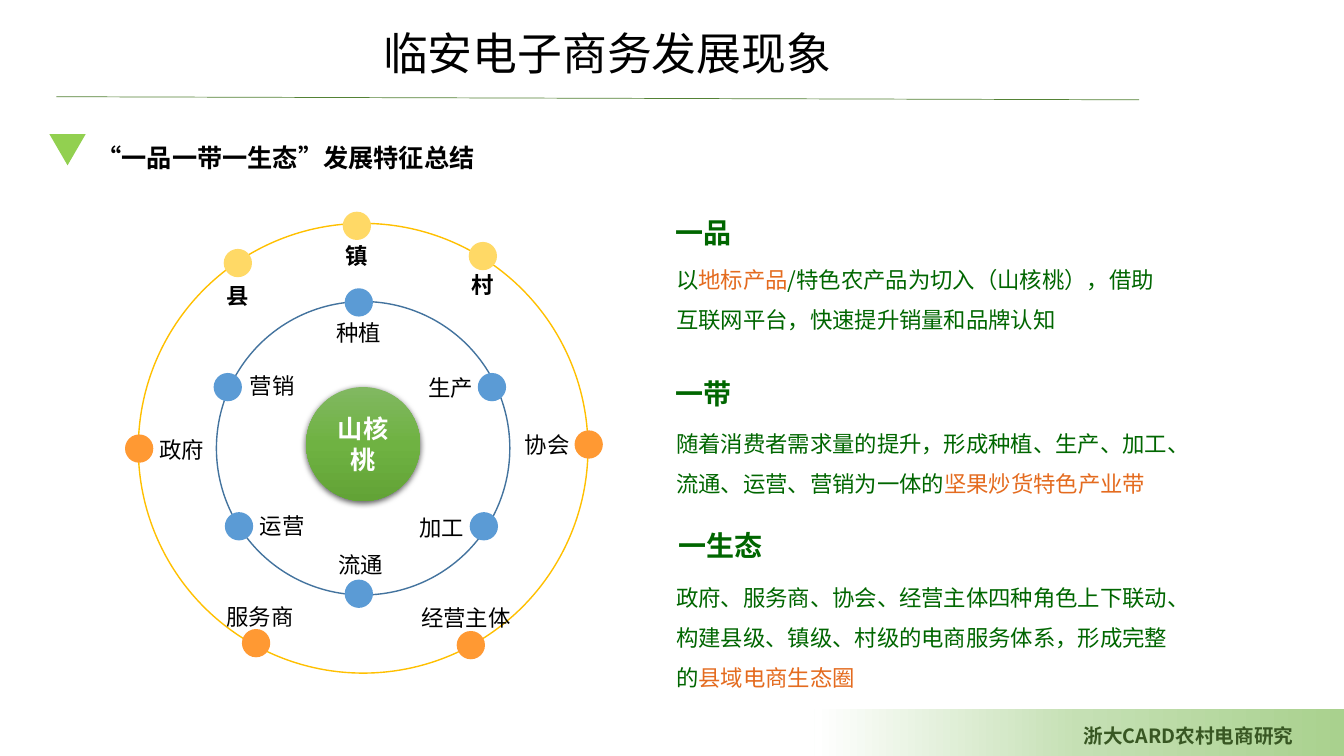
"""Build the slide on the features of Lin'an e-commerce development."""
from dataclasses import dataclass

import pptx
import pptx.dml.color
import pptx.enum.shapes
import pptx.enum.text
import pptx.oxml
import pptx.oxml.ns
import pptx.util
from lxml import etree

Pt = pptx.util.Pt
qn = pptx.oxml.ns.qn
SHAPE = pptx.enum.shapes.MSO_SHAPE
ALIGN = pptx.enum.text.PP_ALIGN
ANCHOR = pptx.enum.text.MSO_ANCHOR
FIT = pptx.enum.text.MSO_AUTO_SIZE
FONT = "Noto Sans CJK SC"
COLORS = {
    "black": "000000", "white": "FFFFFF", "green": "006600", "accent": "E46B1F",
    "footer": "385723", "rule": "548235", "marker": "92D050",
    "inner": "43739E", "outer": "FFC000",
    "chain": "5B9BD5", "level": "FFD966", "role": "FF9933",
}
FOOTER_STOPS = [(0, "A9D18E"), (50, "C5E0B4"), (100, "FFFFFF")]
CORE_STOPS = [(0, "81B861"), (50, "6FB242"), (100, "62A336")]
CENTER_X, CENTER_Y, DOT = 259.4, 320.2, 20.2


@dataclass
class Node:
    text: str
    kind: str
    dot: tuple[float, float]
    label: tuple[float, float]


@dataclass
class Section:
    heading: str
    heading_at: tuple[float, float]
    body_top: float
    width: float
    height: float
    phrases: list[tuple[str, str]]


NODES = [
    Node("种植", "chain", (246.2, 205.9), (233.3, 224.6)),
    Node("生产", "chain", (341.3, 266.4), (298.8, 263.5)),
    Node("加工", "chain", (335.5, 365.8), (292.3, 363.6)),
    Node("流通", "chain", (246.2, 414), (234.7, 390.2)),
    Node("运营", "chain", (160.6, 365.8), (178.6, 362.2)),
    Node("营销", "chain", (152.6, 266.4), (171.4, 262.1)),
    Node("协会", "role", (410.4, 307.4), (367.9, 304.6)),
    Node("政府", "role", (89.3, 310.3), (106.6, 308.2)),
    Node("服务商", "role", (172.8, 449.3), (154.8, 427)),
    Node("经营主体", "role", (326.2, 450.7), (293.8, 427.7)),
    Node("县", "level", (159.8, 177.8), (154.8, 198)),
    Node("镇", "level", (244.8, 151.2), (239.8, 169.2)),
    Node("村", "level", (334.8, 172.8), (329.8, 190.1)),
]
SECTIONS = [
    Section("一品", (464.4, 136.8), 177.1, 368.6, 65.5, [
        ("以", "green"), ("地标产品", "accent"),
        ("/特色农产品为切入（山核桃），借助互联网平台，快速提升销量和品牌认知", "green")]),
    Section("一带", (464.4, 252), 293.8, 378, 65.5, [
        ("随着消费者需求量的提升，形成种植、生产、加工、流通、运营、营销为一体的", "green"),
        ("坚果炒货特色产业带", "accent")]),
    Section("一生态", (466.6, 360.7), 403.9, 378, 94.3, [
        ("政府、服务商、协会、经营主体四种角色上下联动、构建县级、镇级、村级的电商服务体系，形成完整的", "green"),
        ("县域电商生态圈", "accent")]),
]


def rgb(name: str) -> pptx.dml.color.RGBColor:
    """Return the named colour."""
    return pptx.dml.color.RGBColor.from_string(COLORS[name])


def write(tf, phrases: list[tuple[str, str]], size: float, bold: bool = False,
          align=ALIGN.LEFT, spacing: float = 1.0) -> None:
    """Fill the first paragraph of a text frame with coloured phrases."""
    p = tf.paragraphs[0]
    p.alignment, p.line_spacing = align, spacing
    p.font.size, p.font.bold, p.font.name = Pt(size), bold, FONT
    p.font.color.rgb = rgb(phrases[0][1])
    etree.SubElement(p._p.pPr.find(qn("a:defRPr")), qn("a:ea"), typeface=FONT)
    for text, color in phrases:
        r = p.add_run()
        r.text = text
        if color != phrases[0][1]:
            r.font.color.rgb = rgb(color)


def add_text(s, box: tuple[float, float, float, float], phrases: list[tuple[str, str]],
             size: float, bold: bool = False, spacing: float = 1.0, wrap: bool = True):
    """Add a text box and return its text frame."""
    tf = s.shapes.add_textbox(*map(Pt, box)).text_frame
    tf.word_wrap, tf.auto_size = wrap, FIT.SHAPE_TO_FIT_TEXT
    write(tf, phrases, size, bold, spacing=spacing)
    return tf


def add_shape(s, kind, box: tuple[float, float, float, float],
              fill: str | None = None, line: str | None = None):
    """Add a flat preset shape with an optional fill and outline."""
    sp = s.shapes.add_shape(kind, *map(Pt, box))
    sp.shadow.inherit = False
    if fill:
        sp.fill.solid()
        sp.fill.fore_color.rgb = rgb(fill)
    else:
        sp.fill.background()
    if line:
        sp.line.color.rgb, sp.line.width = rgb(line), Pt(1)
    else:
        sp.line.fill.background()
    return sp


def add_circle(s, x: float, y: float, radius: float,
               fill: str | None = None, line: str | None = None):
    """Add a circle around a centre."""
    return add_shape(s, SHAPE.OVAL, (x - radius, y - radius, 2 * radius, 2 * radius), fill, line)


def set_gradient(sp, stops: list[tuple[int, str]], angle: float) -> None:
    """Give a shape a linear gradient with a counter-clockwise angle."""
    sp.fill.gradient()
    sp.fill.gradient_angle = angle
    gs_list = sp._element.spPr.find(qn("a:gradFill")).find(qn("a:gsLst"))
    gs_list.clear()
    for position, color in stops:
        gs = etree.SubElement(gs_list, qn("a:gs"), pos=str(position * 1000))
        etree.SubElement(gs, qn("a:srgbClr"), val=color)


def add_shadow(sp) -> None:
    """Put a soft shadow below a shape."""
    effects = sp._element.spPr.find(qn("a:effectLst"))
    shadow = etree.SubElement(effects, qn("a:outerShdw"), blurRad=str(Pt(4.5)),
                              dist=str(Pt(1.5)), dir="5400000", algn="ctr", rotWithShape="0")
    color = etree.SubElement(shadow, qn("a:srgbClr"), val=COLORS["black"])
    etree.SubElement(color, qn("a:alpha"), val="63000")


def add_frame(s) -> None:
    """Add the footer, title, rule and subtitle."""
    band = add_shape(s, SHAPE.RECTANGLE, (581.8, 506.2, 378.2, 33.8))
    set_gradient(band, FOOTER_STOPS, 180)
    add_text(s, (766.8, 513.4, 193.2, 24.5), [("浙大CARD农村电商研究", "footer")], 14, True)
    rule = s.shapes.add_connector(pptx.enum.shapes.MSO_CONNECTOR.STRAIGHT,
                                  Pt(40.3), Pt(69.1), Pt(813.6), Pt(71.3))
    rule.line.color.rgb, rule.line.width = rgb("rule"), Pt(0.5)
    etree.SubElement(rule._element.spPr, qn("a:effectLst"))
    title = s.shapes.title
    title.left, title.top, title.width, title.height = map(Pt, (266.4, 14.4, 445.7, 46.1))
    tf = title.text_frame
    tf.auto_size, tf.vertical_anchor, tf.word_wrap = FIT.NONE, ANCHOR.TOP, True
    write(tf, [("临安电子商务发展现象", "black")], 32)
    marker = add_shape(s, SHAPE.ISOSCELES_TRIANGLE, (35.3, 95.8, 25.9, 22.3), "marker")
    marker.rotation = 180
    add_text(s, (61.9, 87.1, 287.3, 40.3), [("“一品一带一生态”发展特征总结", "black")],
             18, True, 1.5, False)


def add_rings(s) -> None:
    """Add the core, the two rings and their labelled dots."""
    core = add_circle(s, CENTER_X, 317.2, 40.7)
    set_gradient(core, CORE_STOPS, 270)
    add_shadow(core)
    core.text_frame.word_wrap = True
    core.text_frame.vertical_anchor = ANCHOR.MIDDLE
    write(core.text_frame, [("山核桃", "white")], 18, True, ALIGN.CENTER)
    for radius, line in ((104.8, "inner"), (160.6, "outer")):
        add_circle(s, CENTER_X, CENTER_Y, radius, line=line)
    for node in NODES:
        add_shape(s, SHAPE.OVAL, (*node.dot, DOT, DOT), node.kind)
    for node in NODES:
        add_text(s, (*node.label, 18 + 16 * len(node.text), 26.6),
                 [(node.text, "black")], 16, node.kind == "level")


def add_section(s, section: Section) -> None:
    """Add one heading with its description."""
    add_text(s, (475.9, section.body_top, section.width, section.height),
             section.phrases, 16, spacing=1.5)
    tf = add_text(s, (*section.heading_at, 108.4, 61.2),
                  [(section.heading, "green")], 20, True, 0.9)
    tf.auto_size, tf.vertical_anchor = FIT.NONE, ANCHOR.MIDDLE
    tf.margin_left, tf.margin_top = Pt(18), Pt(3)
    tf.margin_right, tf.margin_bottom = Pt(3), Pt(3)


def main() -> None:
    """Build and save the presentation."""
    prs = pptx.Presentation()
    prs.slide_width, prs.slide_height = Pt(960), Pt(540)
    s = prs.slides.add_slide(prs.slide_layouts[5])
    add_frame(s)
    add_rings(s)
    for section in SECTIONS:
        add_section(s, section)
    prs.save("out.pptx")


if __name__ == "__main__":
    main()
